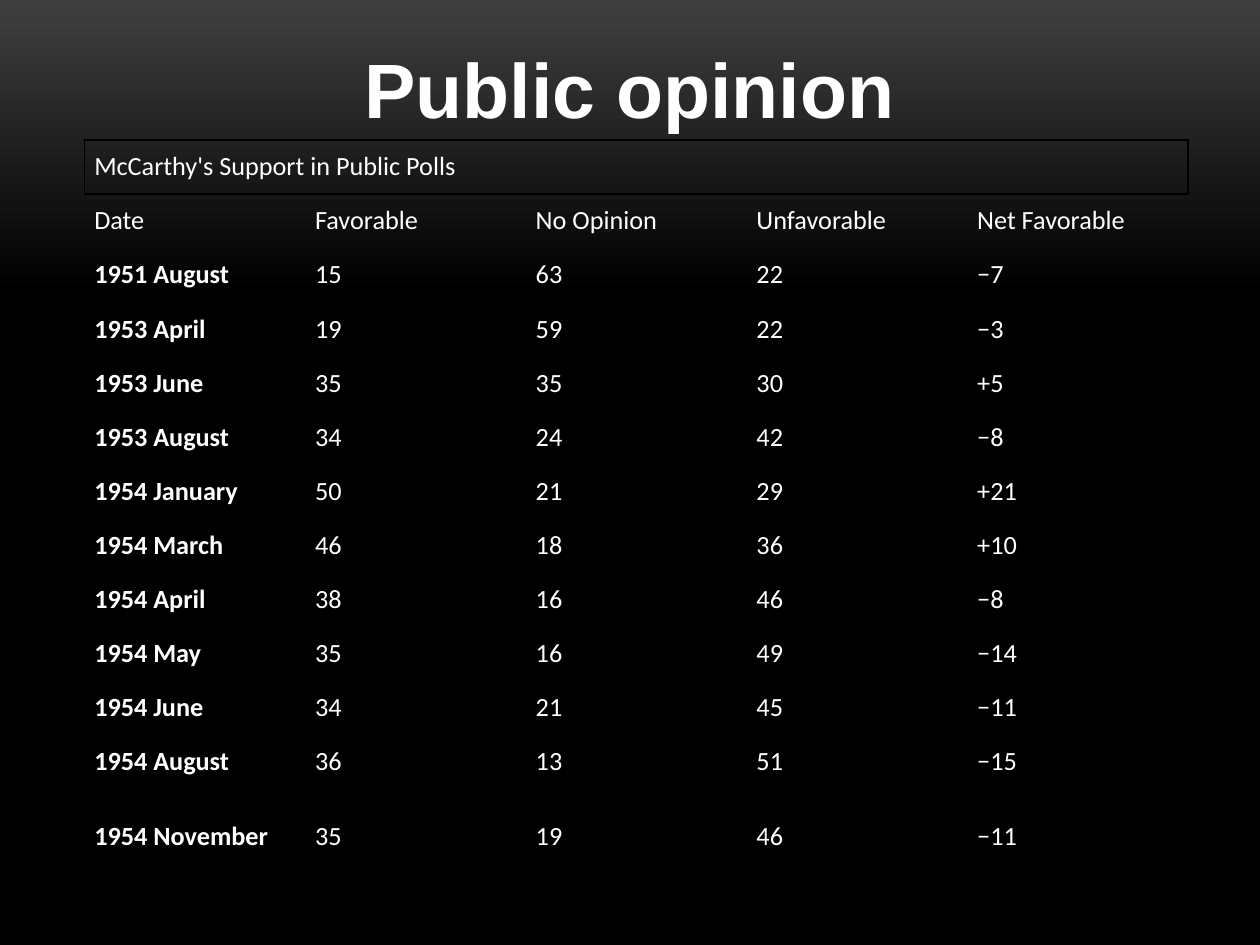
import pptx
import pptx.dml.color
import pptx.enum.text
import pptx.oxml
import pptx.oxml.ns
import pptx.util

Cm = pptx.util.Cm
ANCHOR = pptx.enum.text.MSO_ANCHOR
ALIGN = pptx.enum.text.PP_ALIGN

THEME = {
    "text": "FFFFFF", "border": "000000", "glow": "3F3F3F", "ground": "000000",
    "title_font": "Arial", "table_font": "Calibri",
    "title_size": 44, "table_size": 15,
}
NO_STYLE_NO_GRID = "{2D5ABB26-0587-4C30-8999-92F81FD0307C}"

CAPTION = "McCarthy's Support in Public Polls"
HEADERS = ["Date", "Favorable", "No Opinion", "Unfavorable", "Net Favorable"]
POLLS = [
    ("1951 August", "15", "63", "22", "−7"),
    ("1953 April", "19", "59", "22", "−3"),
    ("1953 June", "35", "35", "30", "+5"),
    ("1953 August", "34", "24", "42", "−8"),
    ("1954 January", "50", "21", "29", "+21"),
    ("1954 March", "46", "18", "36", "+10"),
    ("1954 April", "38", "16", "46", "−8"),
    ("1954 May", "35", "16", "49", "−14"),
    ("1954 June", "34", "21", "45", "−11"),
    ("1954 August", "36", "13", "51", "−15"),
    ("1954 November", "35", "19", "46", "−11"),
]


def write(tf, text, font, size, bold=False, align=ALIGN.LEFT):
    p = tf.paragraphs[0]
    p.alignment = align
    r = p.add_run()
    r.text = text
    r.font.name = font
    r.font.size = pptx.util.Pt(size)
    r.font.bold = bold
    r.font.color.rgb = pptx.dml.color.RGBColor.from_string(THEME["text"])


prs = pptx.Presentation()
prs.slide_width, prs.slide_height = Cm(25.4), Cm(19.05)
s = prs.slides.add_slide(prs.slide_layouts[5])

# Background: grey fading to black in the top third
fill = s.background.fill
fill.gradient()
fill.gradient_angle = 270
for stop, position, color in zip(fill.gradient_stops, (0, 0.31), ("glow", "ground")):
    stop.position = position
    stop.color.rgb = pptx.dml.color.RGBColor.from_string(THEME[color])

# Title
title = s.shapes.title
title.left, title.top, title.width, title.height = Cm(0), Cm(-1.37), Cm(25.4), Cm(4.19)
title.text_frame.word_wrap = True
title.text_frame.vertical_anchor = ANCHOR.BOTTOM
write(title.text_frame, "Public opinion", THEME["title_font"], THEME["title_size"],
      bold=True, align=ALIGN.CENTER)

# Poll table
rows = [[CAPTION], HEADERS, *POLLS]
table = s.shapes.add_table(len(rows), len(HEADERS), Cm(1.7), Cm(2.82),
                           Cm(22.27), Cm(15.03)).table
table.first_row = table.horz_banding = False
table._tbl.tblPr.find(pptx.oxml.ns.qn("a:tableStyleId")).text = NO_STYLE_NO_GRID
for column in table.columns:
    column.width = Cm(4.45)
for row in table.rows:
    row.height = Cm(1.09)
table.rows[len(rows) - 1].height = Cm(1.93)

caption = table.cell(0, 0)
caption.merge(table.cell(0, len(HEADERS) - 1))
for side in "LRTB":
    caption._tc.get_or_add_tcPr().append(pptx.oxml.parse_xml(
        f'<a:ln{side} {pptx.oxml.ns.nsdecls("a")} w="12700"><a:solidFill>'
        f'<a:srgbClr val="{THEME["border"]}"/></a:solidFill></a:ln{side}>'))

for i, values in enumerate(rows):
    for j, value in enumerate(values):
        cell = table.cell(i, j)
        cell.fill.background()
        cell.vertical_anchor = ANCHOR.MIDDLE
        cell.margin_left = cell.margin_right = Cm(0.2)
        cell.margin_top = cell.margin_bottom = Cm(0.1)
        write(cell.text_frame, value, THEME["table_font"], THEME["table_size"],
              bold=i > 1 and j == 0)

prs.save("out.pptx")
